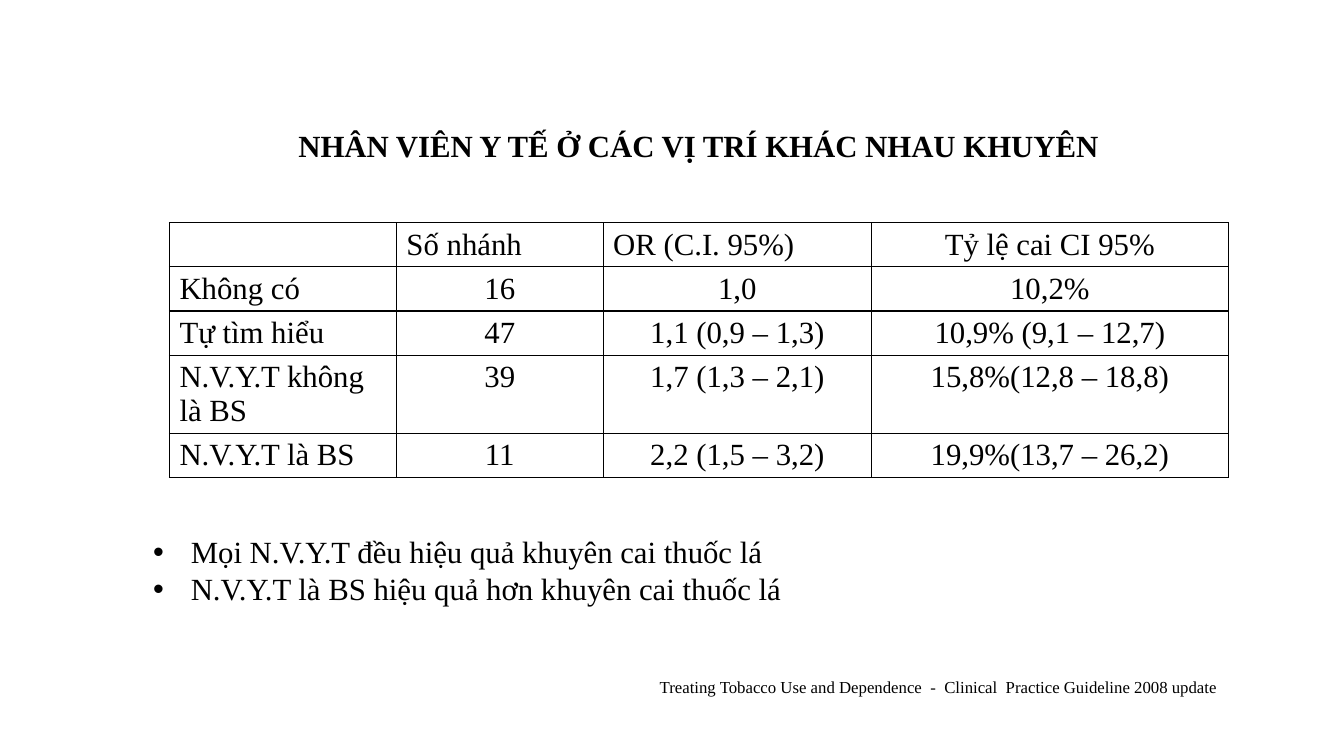
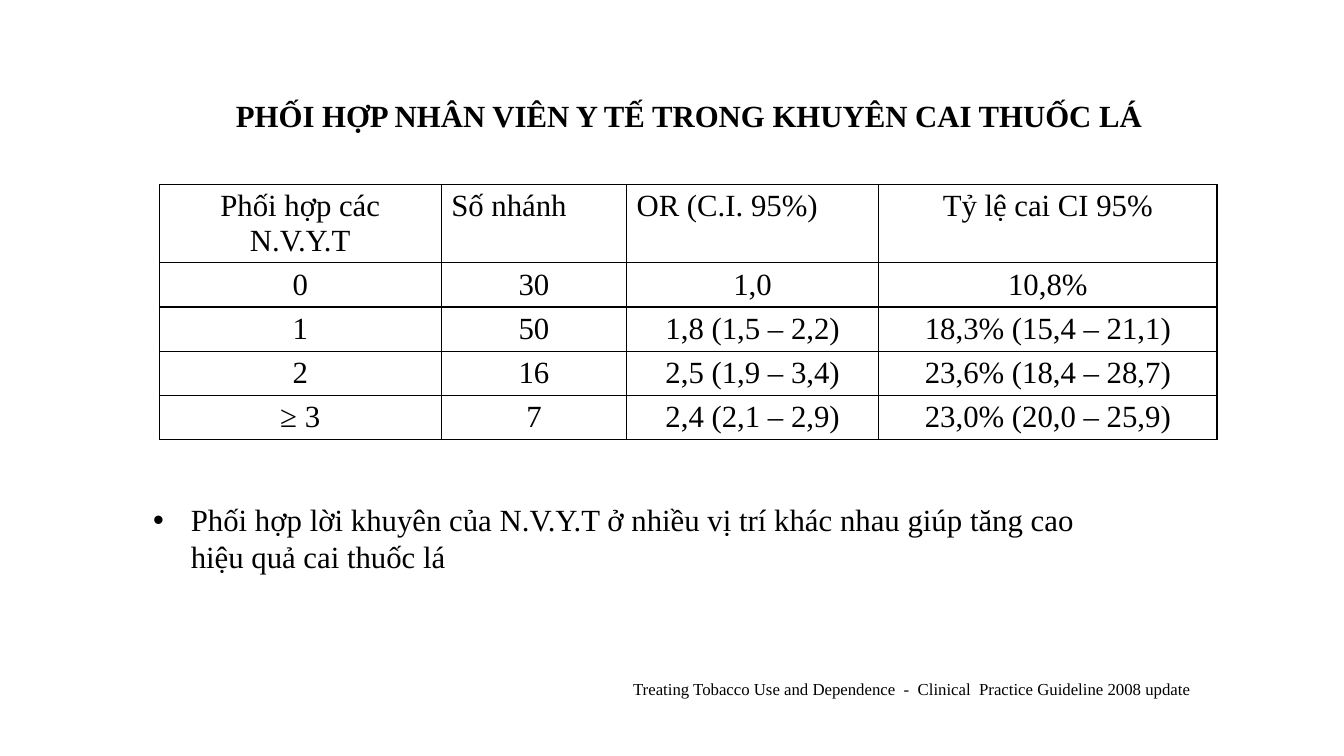
import pptx
import pptx.dml.color
import pptx.enum.text
import pptx.oxml
import pptx.oxml.ns
import pptx.util
from lxml import etree

Cm = pptx.util.Cm
Pt = pptx.util.Pt
ALIGN = pptx.enum.text.PP_ALIGN
COLORS = {"background": "FFFFFF", "ink": "000000"}
SOURCE = "Treating Tobacco Use and Dependence  -  Clinical  Practice Guideline 2008 update"
HEADINGS = ["Số nhánh", "OR (C.I. 95%)", "Tỷ lệ cai CI 95%"]


class Deck:
    font = "Times New Roman"
    body_size = 22
    source_size = 12
    row_height = 1.04
    bullet_indent = 0.95

    def __init__(self):
        self.presentation = pptx.Presentation()
        self.presentation.slide_width = Cm(33.87)
        self.presentation.slide_height = Cm(19.05)
        self.slide = None

    def color(self, name):
        return pptx.dml.color.RGBColor.from_string(COLORS[name])

    def style(self, paragraph, align, size=None, bold=False):
        paragraph.alignment = align
        for run in paragraph.runs:
            run.font.name = self.font
            run.font.size = Pt(size or self.body_size)
            run.font.bold = bold
            run.font.color.rgb = self.color("ink")

    def text_box(self, left, top, width, height):
        frame = self.slide.shapes.add_textbox(
            Cm(left), Cm(top), Cm(width), Cm(height)).text_frame
        frame.word_wrap = True
        return frame

    def start(self, title, left, top, width, height):
        """Add a title-only slide and place its title."""
        layout = self.presentation.slide_layouts[5]
        self.slide = self.presentation.slides.add_slide(layout)
        background = self.slide.background.fill
        background.solid()
        background.fore_color.rgb = self.color("background")
        heading = self.slide.shapes.title
        heading.left, heading.top = Cm(left), Cm(top)
        heading.width, heading.height = Cm(width), Cm(height)
        frame = heading.text_frame
        frame.text = title
        frame.word_wrap = True
        frame.auto_size = pptx.enum.text.MSO_AUTO_SIZE.NONE
        frame.vertical_anchor = pptx.enum.text.MSO_ANCHOR.TOP
        self.style(frame.paragraphs[0], ALIGN.CENTER, bold=True)

    def table(self, left, top, widths, rows, first_column_align):
        """Draw a ruled table whose number columns are centred."""
        table = self.slide.shapes.add_table(
            len(rows), len(widths), Cm(left), Cm(top),
            Cm(sum(widths)), Cm(self.row_height * len(rows))).table
        table.first_row = table.horz_banding = False
        for column, width in zip(table.columns, widths):
            column.width = Cm(width)
        for row_index, texts in enumerate(rows):
            table.rows[row_index].height = Cm(self.row_height)
            for column_index, text in enumerate(texts):
                cell = table.cell(row_index, column_index)
                cell.text = text
                if column_index == 0:
                    align = first_column_align
                elif row_index == 0 and column_index < len(widths) - 1:
                    align = ALIGN.LEFT
                else:
                    align = ALIGN.CENTER
                self.style(cell.text_frame.paragraphs[0], align)
                self.rule(cell)
                cell.fill.background()

    def rule(self, cell):
        """Give a cell a thin line on all four sides."""
        properties = cell._tc.get_or_add_tcPr()
        for side in ("lnL", "lnR", "lnT", "lnB"):
            properties.append(pptx.oxml.parse_xml(
                f'<a:{side} {pptx.oxml.ns.nsdecls("a")} w="{Pt(1)}"><a:solidFill>'
                f'<a:srgbClr val="{COLORS["ink"]}"/></a:solidFill></a:{side}>'))

    def bullets(self, left, top, width, height, lines):
        frame = self.text_box(left, top, width, height)
        frame.text = "\n".join(lines)
        for paragraph in frame.paragraphs:
            self.style(paragraph, ALIGN.JUSTIFY)
            properties = paragraph._p.get_or_add_pPr()
            properties.set("marL", str(Cm(self.bullet_indent)))
            properties.set("indent", str(-Cm(self.bullet_indent)))
            for tag, name, value in (("a:buFont", "typeface", "Arial"),
                                     ("a:buChar", "char", "•")):
                mark = etree.SubElement(properties, pptx.oxml.ns.qn(tag))
                mark.set(name, value)

    def source(self, left, top):
        frame = self.text_box(left, top, 23.95, 0.76)
        frame.text = SOURCE
        paragraph = frame.paragraphs[0]
        paragraph.space_before = Pt(self.source_size / 2)
        self.style(paragraph, ALIGN.RIGHT, self.source_size)


def main():
    deck = Deck()

    deck.start("NHÂN VIÊN Y TẾ Ở CÁC VỊ TRÍ KHÁC NHAU KHUYÊN", 6.17, 3.07, 22.86, 1.27)
    deck.table(4.27, 5.61, [5.72, 5.21, 6.76, 8.99], [
        ["", *HEADINGS],
        ["Không có", "16", "1,0", "10,2%"],
        ["Tự tìm hiểu", "47", "1,1 (0,9 – 1,3)", "10,9% (9,1 – 12,7)"],
        ["N.V.Y.T không là BS", "39", "1,7 (1,3 – 2,1)", "15,8%(12,8 – 18,8)"],
        ["N.V.Y.T là BS", "11", "2,2 (1,5 – 3,2)", "19,9%(13,7 – 26,2)"],
    ], ALIGN.LEFT)
    deck.bullets(3.61, 13.31, 17.78, 2.34, [
        "Mọi N.V.Y.T đều hiệu quả khuyên cai thuốc lá",
        "N.V.Y.T là BS hiệu quả hơn khuyên cai thuốc lá",
    ])
    deck.source(6.99, 16.94)

    deck.start("PHỐI HỢP NHÂN VIÊN Y TẾ TRONG KHUYÊN CAI THUỐC LÁ", 5.51, 2.31, 23.7, 1.7)
    deck.table(4.01, 4.65, [7.11, 4.67, 6.35, 8.53], [
        ["Phối hợp các N.V.Y.T", *HEADINGS],
        ["0", "30", "1,0", "10,8%"],
        ["1", "50", "1,8 (1,5 – 2,2)", "18,3% (15,4 – 21,1)"],
        ["2", "16", "2,5 (1,9 – 3,4)", "23,6% (18,4 – 28,7)"],
        ["≥ 3", "7", "2,4 (2,1 – 2,9)", "23,0% (20,0 – 25,9)"],
    ], ALIGN.CENTER)
    deck.bullets(3.61, 12.5, 23.7, 2.97, [
        "Phối hợp lời khuyên của N.V.Y.T ở nhiều vị trí khác nhau giúp tăng cao hiệu quả cai thuốc lá",
    ])
    deck.source(6.32, 16.97)

    deck.presentation.save("out.pptx")


if __name__ == "__main__":
    main()
